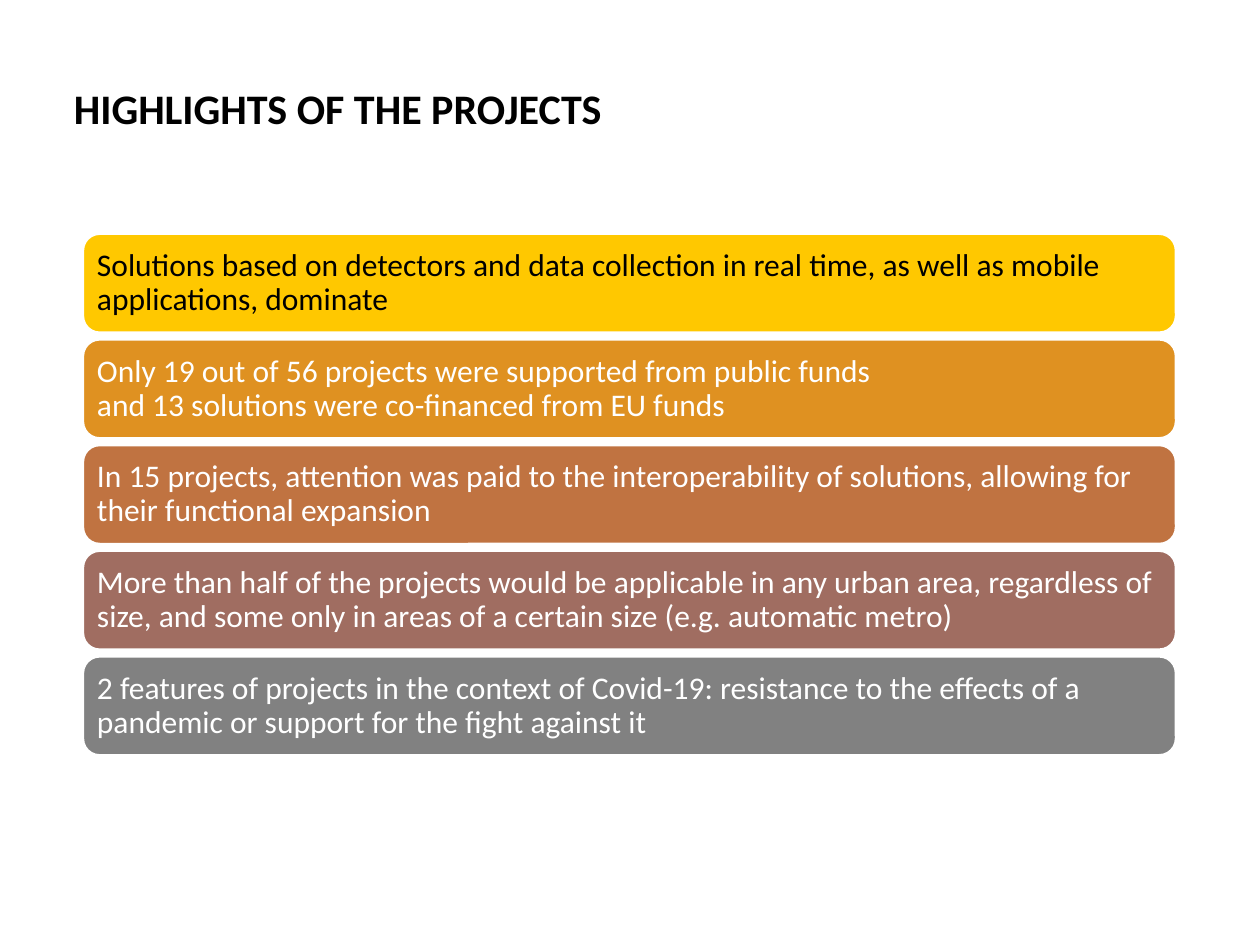
"""Build the slide that lists the highlights of the projects."""
from pptx import Presentation
from pptx.dml.color import RGBColor
from pptx.enum.shapes import MSO_SHAPE
from pptx.enum.text import MSO_ANCHOR, PP_ALIGN
from pptx.util import Cm, Pt

COLORS = {
    "black": "000000",
    "white": "FFFFFF",
    "yellow": "FFC800",
    "orange": "DF9121",
    "copper": "C07341",
    "mauve": "A06D61",
    "gray": "818181",
}
HIGHLIGHTS = [
    ("yellow", "black", "Solutions based on detectors and data collection in real time, "
     "as well as mobile applications, dominate"),
    ("orange", "white", "Only 19 out of 56 projects were supported from public funds\v"
     "and 13 solutions were co-financed from EU funds"),
    ("copper", "white", "In 15 projects, attention was paid to the interoperability of "
     "solutions, allowing for their functional expansion"),
    ("mauve", "white", "More than half of the projects would be applicable in any urban area, "
     "regardless of size, and some only in areas of a certain size (e.g. automatic metro)"),
    ("gray", "white", "2 features of projects in the context of Covid-19: resistance to the "
     "effects of a pandemic or support for the fight against it"),
]
LEFT, TOP, WIDTH, HEIGHT, PITCH = 1.68, 4.72, 22.02, 1.98, 2.13
INSET = Cm(0.18)


def rgb(name):
    return RGBColor.from_string(COLORS[name])


def write(tf, text, size, color, spacing, bold=False):
    tf.word_wrap = True
    p = tf.paragraphs[0]
    p.text = text
    p.alignment = PP_ALIGN.LEFT
    p.line_spacing = spacing
    for r in p.runs:
        r.font.name = "Calibri"
        r.font.size = Pt(size)
        r.font.bold = bold
        r.font.color.rgb = rgb(color)


prs = Presentation()
prs.slide_width, prs.slide_height = Cm(25.4), Cm(19.05)
s = prs.slides.add_slide(prs.slide_layouts[6])

title = s.shapes.add_textbox(Cm(1.24), Cm(1.4), Cm(23.47), Cm(1.3))
write(title.text_frame, "HIGHLIGHTS OF THE PROJECTS", 24, "black", 1.13, bold=True)

for i, (fill, color, text) in enumerate(HIGHLIGHTS):
    sp = s.shapes.add_shape(MSO_SHAPE.ROUNDED_RECTANGLE, Cm(LEFT), Cm(TOP + i * PITCH),
                            Cm(WIDTH), Cm(HEIGHT))
    sp.shadow.inherit = False
    sp.fill.solid()
    sp.fill.fore_color.rgb = rgb(fill)
    sp.line.color.rgb = rgb("white")
    sp.line.width = Pt(1)
    tf = sp.text_frame
    tf.margin_left = tf.margin_right = tf.margin_top = tf.margin_bottom = INSET
    tf.vertical_anchor = MSO_ANCHOR.MIDDLE
    write(tf, text, 18, color, 0.9)

prs.save("out.pptx")
